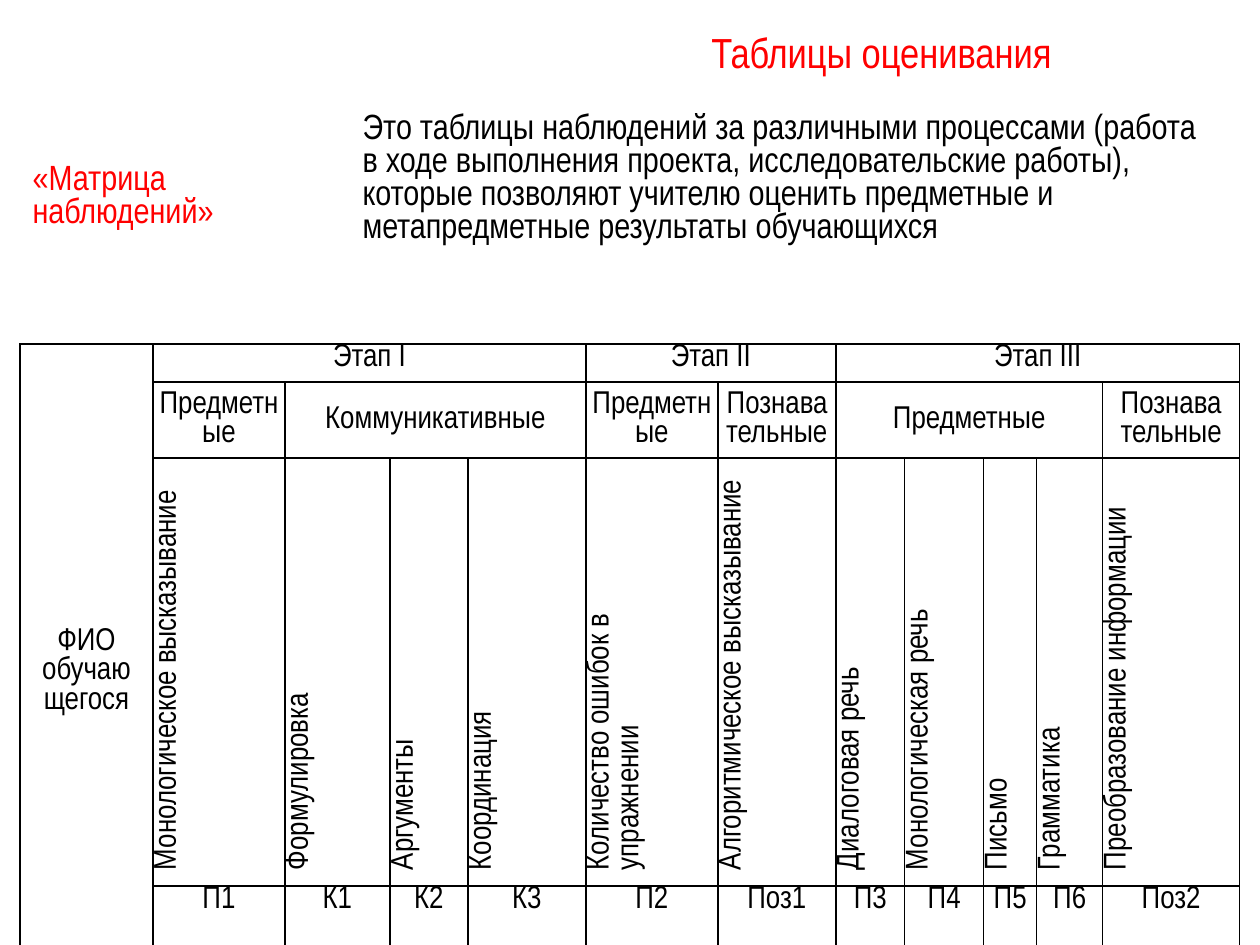
from lxml import etree
from pptx import Presentation
from pptx.dml.color import RGBColor
from pptx.enum.text import MSO_ANCHOR, MSO_AUTO_SIZE, PP_ALIGN
from pptx.oxml.ns import qn
from pptx.util import Emu, Pt

SCALE = 914400 / 126
FONT = "Arial Narrow"
RED = RGBColor(0xFF, 0x00, 0x00)
BLACK = RGBColor(0x00, 0x00, 0x00)
LEFT, CENTER, JUSTIFY = PP_ALIGN.LEFT, PP_ALIGN.CENTER, PP_ALIGN.JUSTIFY
TOP, MIDDLE = MSO_ANCHOR.TOP, MSO_ANCHOR.MIDDLE
NO_TABLE_STYLE = "{2D5ABB26-0587-4C30-8999-92F81FD0307C}"

TITLE_BOX = (699, 20, 374, 63)
INTRO_BOX = (20, 108, 1211, 180)
MATRIX_BOX = (20, 344, 1220, 687)

INTRO_COLUMNS = [330, 881]
MATRIX_COLUMNS = [133, 132, 105, 78, 118, 132, 118, 69, 79, 53, 66, 137]
MATRIX_ROWS = [38, 76, 428, 108, 37]

INTRO = (
    "Это таблицы наблюдений за различными процессами (работа в ходе выполнения "
    "проекта, исследовательские работы), которые позволяют учителю оценить "
    "предметные и метапредметные результаты обучающихся"
)
# Header groups: (text, number of columns)
STAGES = [("Этап I", 4), ("Этап II", 2), ("Этап III", 5)]
SKILL_GROUPS = [
    ("Предметные", 1), ("Коммуникативные", 3), ("Предметные", 1),
    ("Познавательные", 1), ("Предметные", 4), ("Познава\nтельные", 1),
]
SKILLS = [
    ("Монологическое высказывание", "П1"),
    ("Формулировка", "К1"),
    ("Аргументы", "К2"),
    ("Координация", "К3"),
    ("Количество ошибок в упражнении", "П2"),
    ("Алгоритмическое высказывание", "Поз1"),
    ("Диалоговая речь", "П3"),
    ("Монологическая речь", "П4"),
    ("Письмо", "П5"),
    ("Грамматика", "П6"),
    ("Преобразование информации", "Поз2"),
]


def px(length):
    return Emu(round(length * SCALE))


def write(text_frame, text, size, color, alignment):
    text_frame.text = text
    for paragraph in text_frame.paragraphs:
        paragraph.alignment = alignment
        for name, value in {"name": FONT, "size": Pt(size)}.items():
            setattr(paragraph.font, name, value)
            for run in paragraph.runs:
                setattr(run.font, name, value)
        for run in paragraph.runs:
            run.font.color.rgb = color


def write_cell(cell, text, size=18, color=BLACK, alignment=CENTER, anchor=TOP):
    write(cell.text_frame, text, size, color, alignment)
    cell.vertical_anchor = anchor


def add_plain_table(slide, box, columns, rows):
    """Add a table with no style, no banding and no fill."""
    frame = slide.shapes.add_table(len(rows), len(columns), *map(px, box))
    table = frame.table
    table.first_row = table.horz_banding = False
    frame._element.find(".//" + qn("a:tableStyleId")).text = NO_TABLE_STYLE
    for column, width in zip(table.columns, columns):
        column.width = px(width)
    for row, height in zip(table.rows, rows):
        row.height = px(height)
    for cell in table.iter_cells():
        cell.fill.background()
    return table


def set_borders(cell):
    """Draw a thin black line on all four sides of a cell."""
    properties = cell._tc.get_or_add_tcPr()
    for index, side in enumerate(("a:lnL", "a:lnR", "a:lnT", "a:lnB")):
        line = etree.Element(qn(side), w=str(Pt(1)))
        fill = etree.SubElement(line, qn("a:solidFill"))
        etree.SubElement(fill, qn("a:srgbClr"), val=str(BLACK))
        properties.insert(index, line)


def add_title(slide, box):
    shape = slide.shapes.add_textbox(*map(px, box))
    shape.text_frame.word_wrap = False
    shape.text_frame.auto_size = MSO_AUTO_SIZE.SHAPE_TO_FIT_TEXT
    write(shape.text_frame, "Таблицы оценивания", 24, RED, JUSTIFY)


def add_intro(slide, box):
    table = add_plain_table(slide, box, INTRO_COLUMNS, [box[3]])
    write_cell(table.cell(0, 0), "«Матрица наблюдений»", 20, RED, LEFT, MIDDLE)
    write_cell(table.cell(0, 1), INTRO, 20, BLACK, LEFT)


def add_header_row(table, row, groups, anchor):
    """Fill a row with merged group headings, after the name column."""
    column = 1
    for text, span in groups:
        cell = table.cell(row, column)
        if span > 1:
            cell.merge(table.cell(row, column + span - 1))
        write_cell(cell, text, anchor=anchor)
        column += span


def add_matrix(slide, box):
    table = add_plain_table(slide, box, MATRIX_COLUMNS, MATRIX_ROWS)
    margins = {"margin_left": 6, "margin_right": 6, "margin_top": 0, "margin_bottom": 0}
    for cell in table.iter_cells():
        for name, value in margins.items():
            setattr(cell, name, px(value))
        set_borders(cell)

    name_cell = table.cell(0, 0)
    name_cell.merge(table.cell(3, 0))
    write_cell(name_cell, "ФИО обучаю\nщегося", anchor=MIDDLE)
    add_header_row(table, 0, STAGES, TOP)
    add_header_row(table, 1, SKILL_GROUPS, MIDDLE)

    for column, (skill, code) in enumerate(SKILLS, start=1):
        skill_cell = table.cell(2, column)
        write_cell(skill_cell, skill, alignment=LEFT, anchor=MIDDLE)
        skill_cell._tc.get_or_add_tcPr().set("vert", "vert270")
        paragraph_properties = skill_cell.text_frame.paragraphs[0]._p.get_or_add_pPr()
        paragraph_properties.set("marL", str(px(10)))
        paragraph_properties.set("indent", "0")
        write_cell(table.cell(3, column), code)


def main():
    presentation = Presentation()
    presentation.slide_width = px(1260)
    presentation.slide_height = px(945)
    slide = presentation.slides.add_slide(presentation.slide_layouts[6])
    add_title(slide, TITLE_BOX)
    add_intro(slide, INTRO_BOX)
    add_matrix(slide, MATRIX_BOX)
    presentation.save("out.pptx")


if __name__ == "__main__":
    main()
